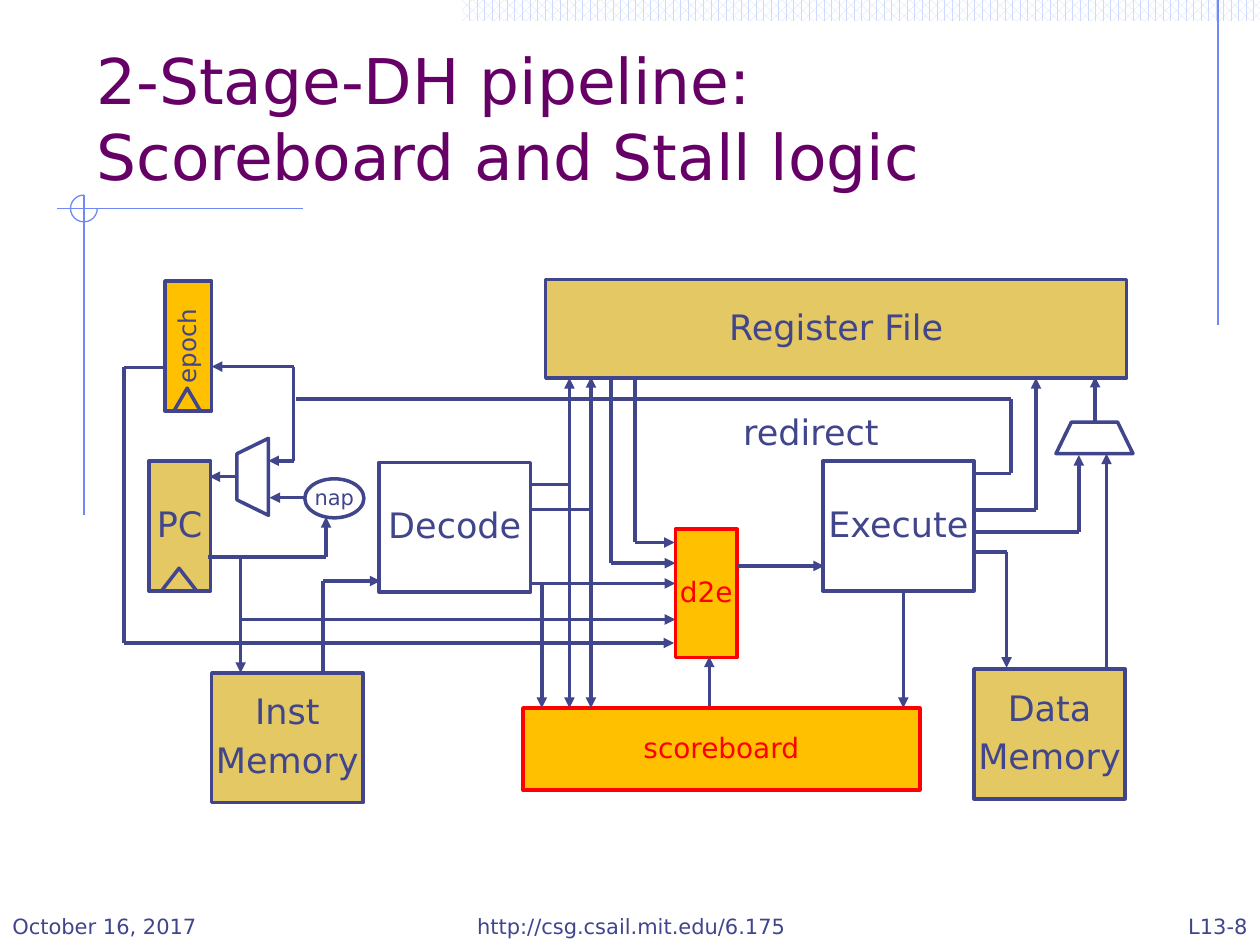
from itertools import pairwise

from lxml.etree import SubElement
from pptx import Presentation
from pptx.dml.color import RGBColor
from pptx.enum.dml import MSO_PATTERN
from pptx.enum.shapes import MSO_CONNECTOR, MSO_SHAPE
from pptx.enum.text import MSO_ANCHOR, MSO_AUTO_SIZE, PP_ALIGN
from pptx.oxml.ns import qn
from pptx.util import Pt

FONT = "DejaVu Sans"
INK, RED, PURPLE = "40458C", "FF0000", "660066"
TAN, AMBER, WHITE = "E4C864", "FFC000", "FFFFFF"
GUIDE, PALE = "6F89F7", "CFDBFD"

# text, left, top, width, height, fill, line and text colour, text size
BLOCKS = [
    ("PC", 85, 263.5, 35.3, 74.2, TAN, INK, 20),
    ("Inst\nMemory", 121, 384.5, 86.4, 74.2, TAN, INK, 20),
    ("Decode", 216.7, 264.2, 86.4, 74.2, None, INK, 20),
    ("Register File", 311.8, 159.8, 331.9, 56.2, TAN, INK, 20),
    ("Execute", 470.2, 263.5, 86.4, 74.2, None, INK, 20),
    ("Data\nMemory", 556.6, 382.3, 86.4, 74.2, TAN, INK, 20),
    ("d2e", 385.9, 302.4, 35.3, 73.4, AMBER, RED, 16),
    ("scoreboard", 298.8, 404.6, 226.8, 46.8, AMBER, RED, 16),
]

# Each route ends in an arrowhead
ARROWS = [
    # register file and decode to d2e
    [(363, 215), (363, 310), (385.5, 310)],
    [(349.2, 216), (349.2, 321.8), (385.9, 321.8)],
    [(303.8, 333.4), (385.9, 333.4)],
    # decode to register file and scoreboard
    [(303, 276.8), (325.4, 276.8), (325.4, 216)],
    [(303, 291.2), (337.7, 291.2), (337.7, 215.5)],
    [(325.4, 276.8), (325.4, 404.6)],
    [(337.7, 291.2), (337.7, 404.6)],
    [(309.6, 333.4), (309.6, 404.6)],
    # instruction fetch
    [(118.8, 318.2), (186.3, 318.2), (186.3, 295.4)],
    [(137.5, 318.2), (137.5, 384.5)],
    [(184.5, 384), (184.5, 332), (217.4, 332)],
    [(137.5, 354), (385.9, 354)],
    [(175, 284.4), (154, 284.4)],
    [(135.4, 272.4), (119.7, 272.4)],
    # redirect and epoch
    [(167.8, 209.5), (167.8, 263.3), (153.4, 263.3)],
    [(167.8, 209.5), (121, 209.5)],
    [(93.6, 210), (71, 210), (71, 367.4), (385.2, 367.4)],
    # execute, data memory and write back
    [(421.9, 323.4), (470.9, 323.4)],
    [(556.6, 291.5), (592, 291.5), (592, 216)],
    [(556, 304), (616.5, 304), (616.5, 260)],
    [(556, 315.4), (575.2, 315.4), (575.2, 381.6)],
    [(632.3, 381.6), (632.3, 259.2)],
    [(625.8, 240.5), (625.8, 215.3)],
    # scoreboard
    [(516.2, 338.4), (516.2, 404.6)],
    [(405.3, 403.2), (405.3, 375.2)],
]
REDIRECT = [(556.6, 270.5), (577.7, 270.5), (577.7, 228), (169, 228)]


def rgb(hex_code):
    return RGBColor.from_string(hex_code)


def add_run(p, text, size, color):
    r = p.add_run()
    r.text = text
    r.font.name = FONT
    r.font.size = Pt(size)
    r.font.color.rgb = rgb(color)


def add_outline(s, kind, left, top, width, height, fill=None, line=INK, weight=2):
    sp = s.shapes.add_shape(kind, Pt(left), Pt(top), Pt(width), Pt(height))
    sp.shadow.inherit = False
    if fill:
        sp.fill.solid()
        sp.fill.fore_color.rgb = rgb(fill)
    else:
        sp.fill.background()
    sp.line.color.rgb = rgb(line)
    sp.line.width = Pt(weight)
    return sp


def add_label(sp, text, size, color=INK):
    tf = sp.text_frame
    tf.word_wrap = False
    tf.vertical_anchor = MSO_ANCHOR.MIDDLE
    for i, line in enumerate(text.split("\n")):
        p = tf.add_paragraph() if i else tf.paragraphs[0]
        p.alignment = PP_ALIGN.CENTER
        p.line_spacing = 0.9
        if i:
            p.space_before = Pt(6)
        add_run(p, line, size, color)


def add_line(s, start, end, color=INK, weight=2, arrow=False):
    cx = s.shapes.add_connector(
        MSO_CONNECTOR.STRAIGHT, *(Pt(v) for v in (*start, *end)))
    cx.line.color.rgb = rgb(color)
    cx.line.width = Pt(weight)
    if arrow:
        SubElement(cx.line._get_or_add_ln(), qn("a:tailEnd"), type="triangle")
    SubElement(cx._element.spPr, qn("a:effectLst"))


def add_route(s, points, arrow=True):
    """Join the points with straight wires; the last one may carry an arrowhead."""
    for start, end in pairwise(points):
        add_line(s, start, end, arrow=arrow and end == points[-1])


def add_text(s, text, left, top, width, height, size,
             align=PP_ALIGN.LEFT, anchor=MSO_ANCHOR.BOTTOM, wrap=True):
    tb = s.shapes.add_textbox(Pt(left), Pt(top), Pt(width), Pt(height))
    tf = tb.text_frame
    tf.word_wrap = wrap
    tf.vertical_anchor = anchor
    p = tf.paragraphs[0]
    p.alignment = align
    add_run(p, text, size, INK)


def add_backdrop(s):
    band = add_outline(s, MSO_SHAPE.RECTANGLE, 264, 0, 456, 12)
    band.line.fill.background()
    band.fill.patterned()
    band.fill.pattern = MSO_PATTERN.PERCENT_60
    band.fill.fore_color.rgb = rgb(PALE)
    band.fill.back_color.rgb = rgb(WHITE)
    for start, end in [((696, 0), (696, 186)), ((173, 119.3), (32.5, 119.3)),
                       ((48, 111.5), (48, 294.5))]:
        add_line(s, start, end, GUIDE, 0.75)
    arc = add_outline(s, MSO_SHAPE.ARC, 40.3, 111.5, 15.3, 15.3, None, GUIDE, 0.75)
    arc.adjustments[0] = 0
    arc.adjustments[1] = 162  # 270 degrees, in units of 100000/60000 degree


def set_title(s):
    sp = s.shapes.title
    sp.left, sp.top, sp.width, sp.height = Pt(48), Pt(24), Pt(612), Pt(90)
    tf = sp.text_frame
    tf.auto_size = MSO_AUTO_SIZE.NONE
    tf.vertical_anchor = MSO_ANCHOR.BOTTOM
    p = tf.paragraphs[0]
    p.alignment = PP_ALIGN.LEFT
    add_run(p, "2-Stage-DH pipeline:", 36, PURPLE)
    p.add_line_break()
    add_run(p, "Scoreboard and Stall logic", 36, PURPLE)


def add_registers_and_muxes(s):
    epoch = add_outline(s, MSO_SHAPE.RECTANGLE, 94.3, 160.6, 26.6, 74.2, AMBER)
    add_label(epoch, "epoch", 14)
    epoch._element.txBody.find(qn("a:bodyPr")).set("vert", "vert270")
    for clock in [(92.2, 324.7, 20.2, 13), (99.4, 221.8, 15.1, 13)]:
        add_outline(s, MSO_SHAPE.ISOSCELES_TRIANGLE, *clock)
    for left, top, angle in [(603.4, 241.2, 180), (122.4, 263.5, 90)]:
        mux = add_outline(s, MSO_SHAPE.FLOWCHART_MANUAL_OPERATION,
                          left, top, 44, 18, WHITE)
        mux.rotation = angle
    nap = add_outline(s, MSO_SHAPE.OVAL, 174.2, 273.6, 33.8, 22.3)
    add_label(nap, "nap", 12)


def main():
    prs = Presentation()
    prs.slide_width, prs.slide_height = Pt(720), Pt(540)
    s = prs.slides.add_slide(prs.slide_layouts[5])
    add_backdrop(s)
    set_title(s)
    for text, left, top, width, height, fill, color, size in BLOCKS:
        sp = add_outline(s, MSO_SHAPE.RECTANGLE, left, top, width, height, fill, color)
        add_label(sp, text, size, color)
    add_registers_and_muxes(s)
    for points in ARROWS:
        add_route(s, points)
    add_route(s, REDIRECT, arrow=False)
    add_text(s, "redirect", 417.6, 231.1, 92.2, 31.7, 20,
             anchor=MSO_ANCHOR.TOP, wrap=False)
    add_text(s, "October 16, 2017", 0, 504, 150, 36, 12)
    add_text(s, "http://csg.csail.mit.edu/6.175", 242, 504, 237.6, 36, 12,
             PP_ALIGN.CENTER)
    add_text(s, "L13-8", 570, 504, 150, 36, 12, PP_ALIGN.RIGHT)
    prs.save("out.pptx")


if __name__ == "__main__":
    main()
